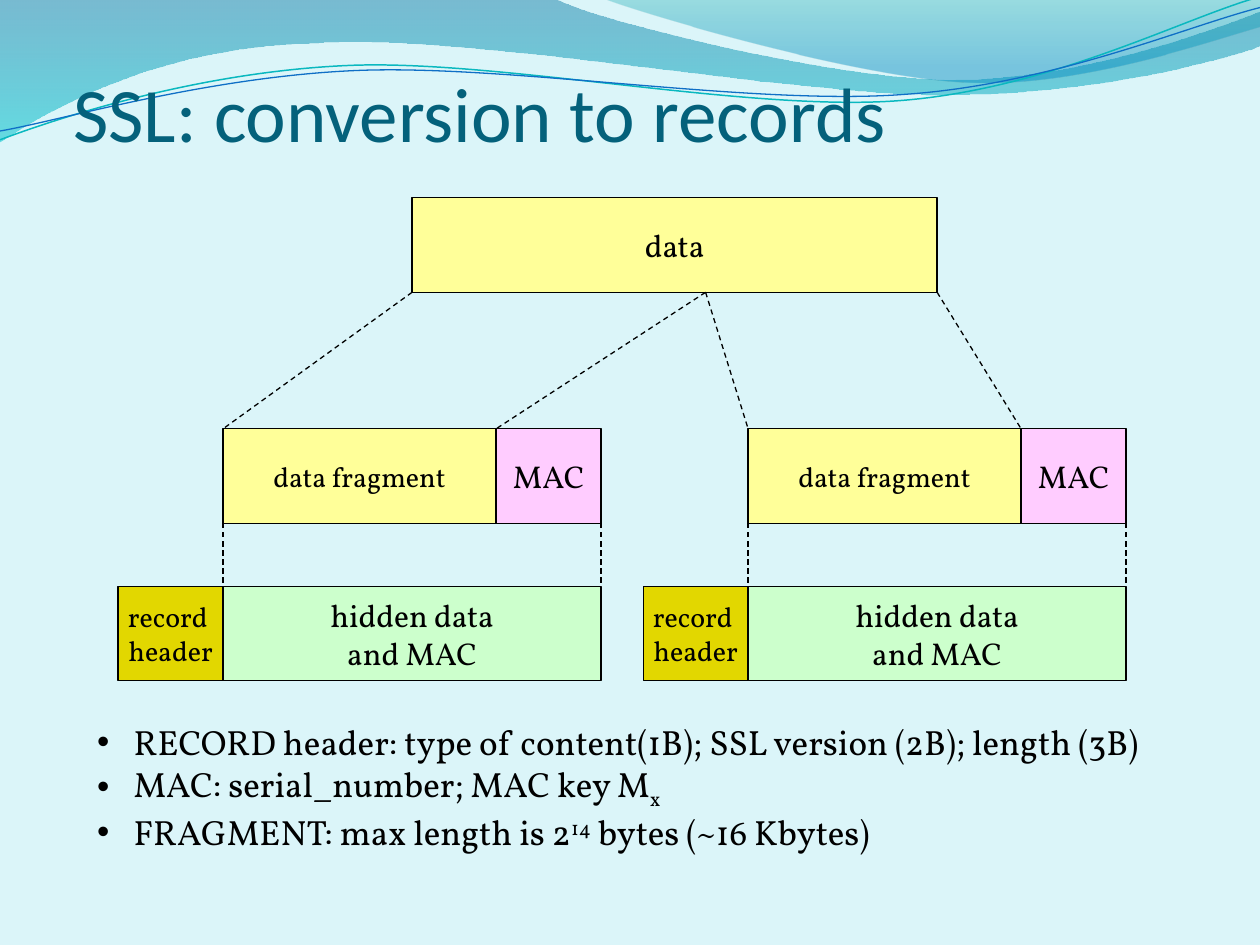
"""Build a slide showing how SSL converts data to records."""
from typing import NamedTuple, Optional

from lxml.etree import SubElement
from pptx import Presentation
from pptx.dml.color import RGBColor
from pptx.enum.dml import MSO_LINE
from pptx.enum.shapes import MSO_CONNECTOR, MSO_SHAPE
from pptx.enum.text import MSO_ANCHOR, MSO_AUTO_SIZE, PP_ALIGN
from pptx.oxml.ns import qn
from pptx.util import Inches, Pt

COLORS = {
    "background": "DBF5F9", "title": "04617B", "ink": "000000",
    "data": "FFFF99", "mac": "FFCCFF", "hidden": "CCFFCC", "header": "E2D700",
    "deep": "0074A1", "aqua": "00C6CF", "teal": "00A1A9", "blue": "008BBF",
    "teal line": "0AB8BF", "blue line": "0F6FC6",
}
BODY_FONT = "Vollkorn"
BOX_HEIGHT = 0.75
DATA_TOP = 1.57
FRAGMENT_TOP = DATA_TOP + 11 / 6
RECORD_TOP = FRAGMENT_TOP + 1.25
RECORD_LEFT, RECORD_STEP = 15 / 16, 25 / 6
HEADER_WIDTH = MAC_WIDTH = 5 / 6
FRAGMENT_WIDTH = 13 / 6
HIDDEN_WIDTH = FRAGMENT_WIDTH + MAC_WIDTH
DATA_LEFT, DATA_WIDTH, DATA_SPLIT = RECORD_LEFT + 14 / 6, 25 / 6, 5.6


class Box(NamedTuple):
    left: float
    top: float
    width: float
    color: str
    text: str
    size: int = 18


class Stop(NamedTuple):
    position: float
    color: str
    alpha: int


class Wave(NamedTuple):
    """Hold runs of points: two numbers draw a line, six a curve."""
    start: tuple
    segments: list
    stops: tuple = ()
    line: Optional[str] = None
    line_width: float = 0.75


WAVES = [
    Wave((0, 0), [
        (4.4, -0.01), (4.76, 0.17, 6.64, 0.63, 7.58, 0.63),
        (8.53, 0.63, 9.58, 0.26, 10, 0.09), (10.01, 0.36),
        (9.83, 0.44, 8.7, 0.76, 7.46, 0.75), (6.22, 0.75, 3.82, 0.28, 2.57, 0.34),
        (1.29, 0.36, 0.46, 0.83, -0.01, 1.13), (0, 0),
    ], stops=(Stop(0, "deep", 45), Stop(1, "aqua", 55))),
    Wave((4.79, -0.01), [
        (5.09, 0.11, 6.82, 0.62, 7.69, 0.65), (8.56, 0.69, 9.61, 0.32, 10, 0.21),
        (10, 0), (4.79, -0.01),
    ], stops=(Stop(0, "teal", 30), Stop(0.8, "blue", 45))),
    Wave((0, 1.11), [
        (0.48, 0.93, 1.58, 0.57, 2.77, 0.52), (3.95, 0.47, 5.93, 0.89, 7.13, 0.8),
        (8.33, 0.71, 9.38, 0.15, 9.98, -0.02),
    ], line="teal line", line_width=0.85),
    Wave((0, 1.04), [
        (0.47, 0.96, 1.64, 0.61, 2.83, 0.56), (4.03, 0.51, 5.97, 0.84, 7.17, 0.75),
        (8.36, 0.67, 9.41, 0.21, 10, 0.06),
    ], line="blue line"),
]

BULLETS = [
    [("RECORD header: type of content(1B); SSL version (2B); length (3B)", 0)],
    [("MAC: serial_number; MAC key M", 0), ("x", -25)],
    [("FRAGMENT: max length is 2", 0), ("14", 30), (" bytes (~16 Kbytes)", 0)],
]


def rgb(name: str) -> RGBColor:
    return RGBColor.from_string(COLORS[name])


def write_text(paragraph, text: str, *, size: int, font: str = BODY_FONT,
               color: str = "ink", align=PP_ALIGN.LEFT, baseline: int = 0) -> None:
    paragraph.alignment = align
    run = paragraph.add_run()
    run.text = text
    run.font.size, run.font.name = Pt(size), font
    run.font.color.rgb = rgb(color)
    if baseline:
        run.font._element.set("baseline", str(baseline * 1000))


def place(shape, left: float, top: float, width: float, height: float) -> None:
    shape.left, shape.top = Inches(left), Inches(top)
    shape.width, shape.height = Inches(width), Inches(height)


def bend(shape, segments: list) -> None:
    """Turn the straight pieces of a freeform into its Bezier curves."""
    pieces = list(shape._element.iter(qn("a:lnTo")))
    for piece, segment in zip(pieces, segments):
        if len(segment) == 2:
            continue
        piece.tag = qn("a:cubicBezTo")
        piece.remove(piece[0])
        for x, y in zip(segment[::2], segment[1::2]):
            point = SubElement(piece, qn("a:pt"))
            point.set("x", str(Inches(x) - shape.left))
            point.set("y", str(Inches(y) - shape.top))


def draw_wave(slide, wave: Wave) -> None:
    points = [(Inches(x), Inches(y)) for *_, x, y in (wave.start, *wave.segments)]
    builder = slide.shapes.build_freeform(*points[0], scale=1.0)
    builder.add_line_segments(points[1:], close=bool(wave.stops))
    shape = builder.convert_to_shape()
    bend(shape, wave.segments)
    shape.shadow.inherit = False
    if wave.line:
        shape.fill.background()
        shape.line.color.rgb = rgb(wave.line)
        shape.line.width = Pt(wave.line_width)
        return
    shape.line.fill.background()
    shape.fill.gradient()
    shape.fill.gradient_angle = 270
    for gradient_stop, stop in zip(shape.fill.gradient_stops, wave.stops):
        gradient_stop.position = stop.position
        gradient_stop.color.rgb = rgb(stop.color)
    colors = shape._element.spPr.find(qn("a:gradFill")).iter(qn("a:srgbClr"))
    for color, stop in zip(colors, wave.stops):
        SubElement(color, qn("a:alpha")).set("val", str(stop.alpha * 1000))


def draw_box(slide, box: Box) -> None:
    shape = slide.shapes.add_shape(MSO_SHAPE.RECTANGLE, 0, 0, 0, 0)
    place(shape, box.left, box.top, box.width, BOX_HEIGHT)
    shape.shadow.inherit = False
    shape.fill.solid()
    shape.fill.fore_color.rgb = rgb(box.color)
    shape.line.color.rgb = rgb("ink")
    shape.line.width = Pt(0.75)
    frame = shape.text_frame
    frame.word_wrap = False
    frame.vertical_anchor = MSO_ANCHOR.MIDDLE
    for index, text in enumerate(box.text.split("\n")):
        paragraph = frame.add_paragraph() if index else frame.paragraphs[0]
        write_text(paragraph, text, size=box.size, align=PP_ALIGN.CENTER)


def draw_dash(slide, start: tuple, end: tuple) -> None:
    line = slide.shapes.add_connector(
        MSO_CONNECTOR.STRAIGHT, *(Inches(value) for value in start + end))
    line.line.color.rgb = rgb("ink")
    line.line.width = Pt(0.75)
    line.line.dash_style = MSO_LINE.DASH
    SubElement(line._element.spPr, qn("a:effectLst"))


def draw_record(slide, left: float, source_left: float, source_right: float) -> None:
    """Draw a fragment with its MAC, its record and the lines from the data."""
    content_left = left + HEADER_WIDTH
    mac_left = content_left + FRAGMENT_WIDTH
    for box in (
        Box(content_left, FRAGMENT_TOP, FRAGMENT_WIDTH, "data", "data fragment", 16),
        Box(mac_left, FRAGMENT_TOP, MAC_WIDTH, "mac", "MAC"),
        Box(content_left, RECORD_TOP, HIDDEN_WIDTH, "hidden", "hidden data\nand MAC"),
        Box(left, RECORD_TOP, HEADER_WIDTH, "header", "record \nheader", 16),
    ):
        draw_box(slide, box)
    for x in (content_left, content_left + HIDDEN_WIDTH):
        draw_dash(slide, (x, FRAGMENT_TOP + BOX_HEIGHT), (x, RECORD_TOP))
    for source, target in ((source_left, content_left), (source_right, mac_left)):
        draw_dash(slide, (source, DATA_TOP + BOX_HEIGHT), (target, FRAGMENT_TOP))


def fill_title(title) -> None:
    place(title, 0.58, 0, 8.5, 1.25)
    frame = title.text_frame
    frame.auto_size = MSO_AUTO_SIZE.NONE
    frame.vertical_anchor = MSO_ANCHOR.BOTTOM
    frame.margin_left = frame.margin_right = frame.margin_bottom = 0
    write_text(frame.paragraphs[0], "SSL: conversion to records",
               size=44, font="Calibri", color="title")


def fill_body(body) -> None:
    place(body, 0.67, 5.67, 8.48, 1.11)
    frame = body.text_frame
    frame.word_wrap = False
    frame.auto_size = MSO_AUTO_SIZE.SHAPE_TO_FIT_TEXT
    for index, runs in enumerate(BULLETS):
        paragraph = frame.add_paragraph() if index else frame.paragraphs[0]
        paragraph.space_before = Pt(0)
        properties = paragraph._p.get_or_add_pPr()
        properties.set("marL", str(Inches(0.29)))
        properties.set("indent", str(Inches(-0.29)))
        for text, baseline in runs:
            write_text(paragraph, text, size=20, baseline=baseline)


def main() -> None:
    presentation = Presentation()
    presentation.slide_width, presentation.slide_height = Inches(10), Inches(7.5)
    slide = presentation.slides.add_slide(presentation.slide_layouts[1])
    slide.background.fill.solid()
    slide.background.fill.fore_color.rgb = rgb("background")
    title, body = slide.placeholders
    for wave in WAVES:
        draw_wave(slide, wave)
    fill_title(title)
    fill_body(body)
    for placeholder in (title, body):
        slide.shapes._spTree.append(placeholder._element)
    draw_box(slide, Box(DATA_LEFT, DATA_TOP, DATA_WIDTH, "data", "data"))
    draw_record(slide, RECORD_LEFT, DATA_LEFT, DATA_SPLIT)
    draw_record(slide, RECORD_LEFT + RECORD_STEP, DATA_SPLIT, DATA_LEFT + DATA_WIDTH)
    presentation.save("out.pptx")


if __name__ == "__main__":
    main()
